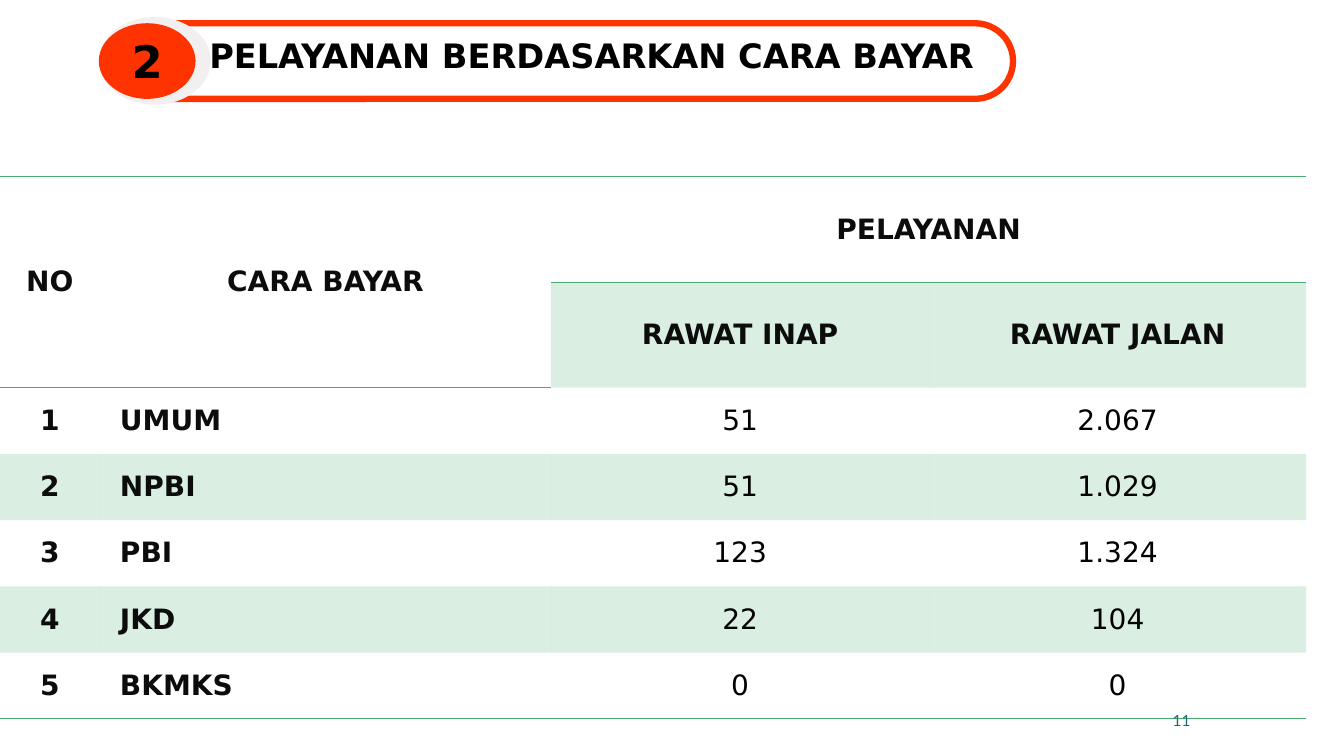
import dataclasses
import typing

import lxml.etree
import pptx
import pptx.dml.color
import pptx.enum.shapes
import pptx.enum.text
import pptx.oxml.ns
import pptx.util

Pt = pptx.util.Pt
Align = pptx.enum.text.PP_ALIGN
Anchor = pptx.enum.text.MSO_ANCHOR
Preset = pptx.enum.shapes.MSO_SHAPE
qn = pptx.oxml.ns.qn


@dataclasses.dataclass(frozen=True)
class Theme:
    ink: str = "000000"
    heading_ink: str = "0C0C0C"
    green: str = "46AC6F"
    teal: str = "1F696F"
    orange: str = "FF3300"
    pale: str = "F1EFF0"
    font: str = "DejaVu Sans"
    number_font: str = "Lato"
    badge_size: float = 32
    title_size: float = 24
    table_size: float = 20
    number_size: float = 11


@dataclasses.dataclass(frozen=True)
class Box:
    left: float
    top: float
    width: float
    height: float

    def lengths(self) -> tuple[int, ...]:
        return tuple(Pt(value) for value in dataclasses.astuple(self))


@dataclasses.dataclass(frozen=True)
class BannerPart:
    preset: Preset
    box: Box
    fill: typing.Optional[str] = None
    line: typing.Optional[str] = None
    text: str = ""


@dataclasses.dataclass(frozen=True)
class Payment:
    name: str
    inpatient: str
    outpatient: str


THEME = Theme()
COLUMN_WIDTHS = (71.3, 322.4, 270, 269.3)
HEADER_HEIGHT = 75.4
ROW_HEIGHT = 47.3
HEADER_ROWS = (
    ("NO", "CARA BAYAR", "PELAYANAN", ""),
    ("", "", "RAWAT INAP", "RAWAT JALAN"),
)
PAYMENTS = (
    Payment("UMUM", "51", "2.067"),
    Payment("NPBI", "51", "1.029"),
    Payment("PBI", "123", "1.324"),
    Payment("JKD", "22", "104"),
    Payment("BKMKS", "0", "0"),
)
BANNER = (
    BannerPart(Preset.ROUNDED_RECTANGLE, Box(79.2, 16.6, 644.4, 54), line=THEME.orange),
    BannerPart(Preset.OVAL, Box(70.6, 12.2, 79.9, 62.6), fill=THEME.pale),
    BannerPart(Preset.OVAL, Box(70.6, 16.6, 69.1, 54), fill=THEME.orange, text="2"),
)


def rgb(value: str) -> pptx.dml.color.RGBColor:
    return pptx.dml.color.RGBColor.from_string(value)


def write(frame, text: str, size: float, color: str, align: Align,
          bold: bool = True, font: str = THEME.font) -> None:
    frame.text = text
    para = frame.paragraphs[0]
    para.alignment = align
    for span in para.runs:
        span.font.name = font
        span.font.size = Pt(size)
        span.font.bold = bold
        span.font.color.rgb = rgb(color)


def add_border(cell, side: str) -> None:
    properties = cell._tc.get_or_add_tcPr()
    border = lxml.etree.SubElement(properties, qn(side), w=str(Pt(1)))
    fill = lxml.etree.SubElement(border, qn("a:solidFill"))
    lxml.etree.SubElement(fill, qn("a:srgbClr"), val=THEME.green)


def shade(cell) -> None:
    cell.fill.solid()
    cell.fill.fore_color.rgb = rgb(THEME.green)
    color = cell._tc.tcPr.find(qn("a:solidFill")).find(qn("a:srgbClr"))
    lxml.etree.SubElement(color, qn("a:alpha"), val="20000")


def format_cell(cell, row: int, column: int, text: str, last_row: int) -> None:
    is_value = row >= len(HEADER_ROWS) and column >= 2
    is_name = row >= len(HEADER_ROWS) and column == 1
    write(cell.text_frame, text, THEME.table_size,
          THEME.ink if is_value else THEME.heading_ink,
          Align.LEFT if is_name else Align.CENTER, bold=not is_value)
    cell.vertical_anchor = Anchor.MIDDLE
    cell.margin_left = cell.margin_right = Pt(0 if is_value else 14.4)
    cell.margin_top = cell.margin_bottom = Pt(0 if is_value else 5)
    if row == 0:
        add_border(cell, "a:lnT")
    if row in (0, last_row) or (row == 1 and column < 2):
        add_border(cell, "a:lnB")
    if row % 2 == 1 and (row > 1 or column >= 2):
        shade(cell)


def add_payment_table(page) -> None:
    rows = HEADER_ROWS + tuple(
        (str(number), *dataclasses.astuple(payment))
        for number, payment in enumerate(PAYMENTS, 1))
    heights = [HEADER_HEIGHT] * len(HEADER_ROWS) + [ROW_HEIGHT] * len(PAYMENTS)
    box = Box(0, 126.2, sum(COLUMN_WIDTHS), sum(heights))
    table = page.shapes.add_table(len(rows), len(COLUMN_WIDTHS), *box.lengths()).table
    table.first_row = table.horz_banding = False
    style = table._tbl.tblPr.find(qn("a:tableStyleId"))
    style.text = "{2D5ABB26-0587-4C30-8999-92F81FD0307C}"
    for column, width in zip(table.columns, COLUMN_WIDTHS):
        column.width = Pt(width)
    for row, height in zip(table.rows, heights):
        row.height = Pt(height)
    for row, texts in enumerate(rows):
        for column, text in enumerate(texts):
            format_cell(table.cell(row, column), row, column, text, len(rows) - 1)
    table.cell(0, 0).merge(table.cell(1, 0))
    table.cell(0, 1).merge(table.cell(1, 1))
    table.cell(0, 2).merge(table.cell(0, 3))


def add_banner_part(group, part: BannerPart) -> None:
    shape = group.shapes.add_shape(part.preset, *part.box.lengths())
    shape.shadow.inherit = False
    if part.preset == Preset.ROUNDED_RECTANGLE:
        shape.adjustments[0] = 0.5
    if part.fill:
        shape.fill.solid()
        shape.fill.fore_color.rgb = rgb(part.fill)
    else:
        shape.fill.background()
    if part.line:
        shape.line.color.rgb = rgb(part.line)
        shape.line.width = Pt(4.5)
    else:
        shape.line.fill.background()
    if part.text:
        shape.text_frame.vertical_anchor = Anchor.MIDDLE
        write(shape.text_frame, part.text, THEME.badge_size, THEME.ink, Align.CENTER)


def add_page_number(page) -> None:
    box = page.shapes.add_textbox(*Box(633.6, 500.4, 223.9, 28.8).lengths())
    box.text_frame.word_wrap = True
    box.text_frame.vertical_anchor = Anchor.MIDDLE
    write(box.text_frame, "11", THEME.number_size, THEME.teal, Align.RIGHT,
          bold=False, font=THEME.number_font)


def place_title(page) -> None:
    title = page.shapes.title
    title.left, title.top, title.width, title.height = Box(113, 3.6, 619.2, 54).lengths()
    frame = title.text_frame
    write(frame, "PELAYANAN BERDASARKAN CARA BAYAR", THEME.title_size,
          THEME.ink, Align.CENTER)
    frame.auto_size = pptx.enum.text.MSO_AUTO_SIZE.NONE
    frame.word_wrap = True
    frame.vertical_anchor = Anchor.BOTTOM
    frame.paragraphs[0].line_spacing = 0.9
    title.element.getparent().append(title.element)


def main() -> None:
    deck = pptx.Presentation()
    deck.slide_width, deck.slide_height = Pt(960), Pt(540)
    page = deck.slides.add_slide(deck.slide_layouts.get_by_name("Title Only"))
    add_payment_table(page)
    add_page_number(page)
    group = page.shapes.add_group_shape()
    for part in BANNER:
        add_banner_part(group, part)
    place_title(page)
    deck.save("out.pptx")


if __name__ == "__main__":
    main()
